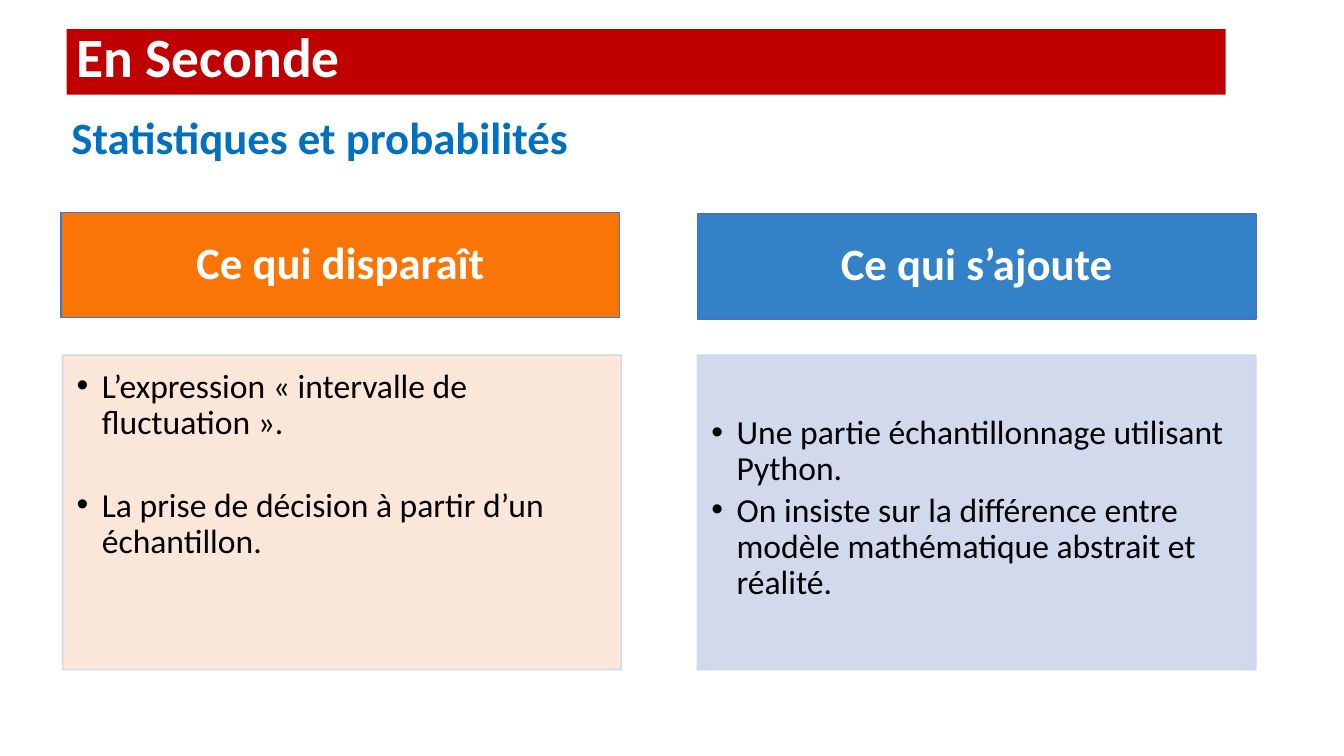
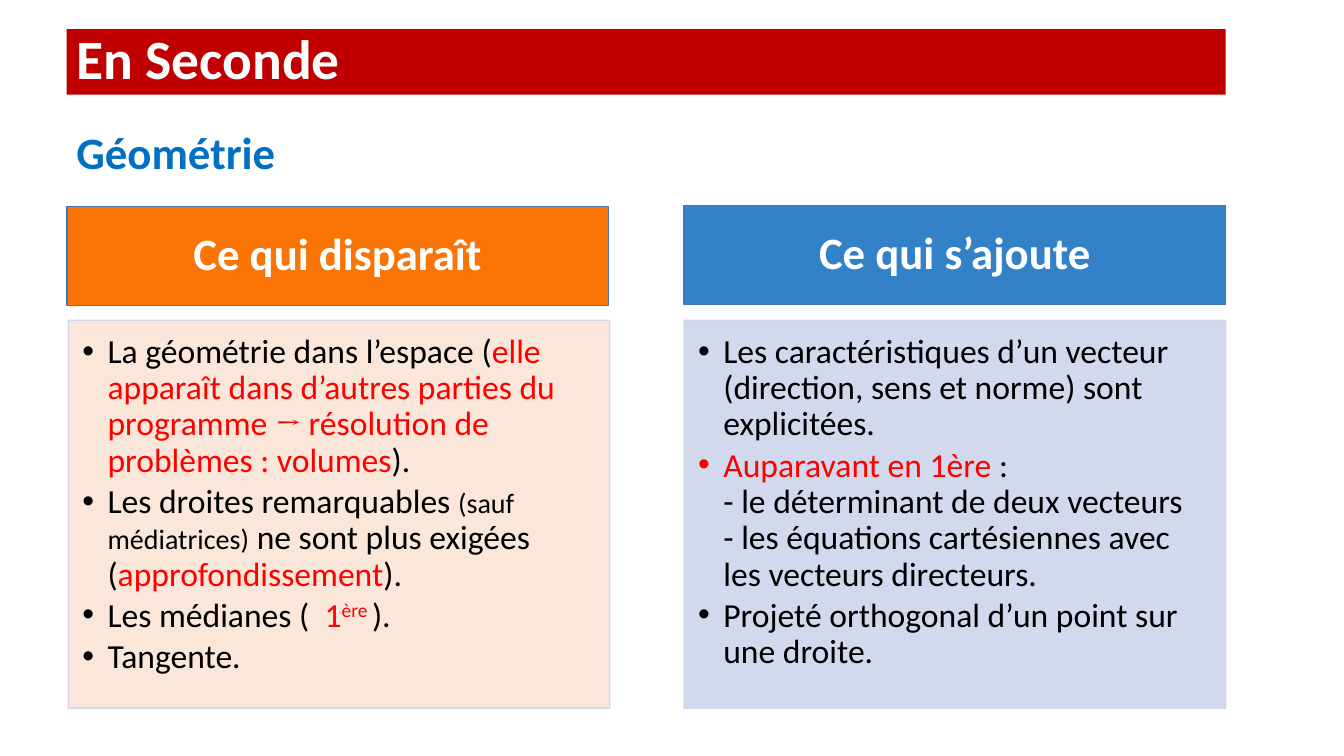
from dataclasses import dataclass
from typing import NamedTuple

from lxml.etree import SubElement
from pptx import Presentation
from pptx.dml.color import RGBColor
from pptx.enum.shapes import MSO_SHAPE
from pptx.enum.text import MSO_ANCHOR, MSO_AUTO_SIZE, PP_ALIGN
from pptx.oxml.ns import qn
from pptx.util import Pt


# Theme: colours, fonts and type sizes
@dataclass(frozen=True)
class Theme:
    red: str = "C00000"
    blue: str = "0070C0"
    white: str = "FFFFFF"
    black: str = "000000"
    alert: str = "FF0000"
    orange: str = "FA7406"
    azure: str = "3381C7"
    edge: str = "4472C4"
    peach: str = "FBE5D6"
    pale: str = "CFD5EA"
    font: str = "Calibri"
    serif: str = "Cambria"
    title: float = 39.6
    head: float = 32
    text: float = 24
    small: float = 20
    alpha: int = 90


THEME = Theme()


class Box(NamedTuple):
    left: float
    top: float
    width: float
    height: float


class Run(NamedTuple):
    text: str
    color: str = THEME.black
    size: float = THEME.text
    font: str = THEME.font
    bold: bool = False
    raised: bool = False


class Item(NamedTuple):
    runs: list[Run]
    before: float = 0


BREAK = Run("\n")


@dataclass(frozen=True)
class Panel:
    head: Box
    body: Box
    label: str
    color: str
    tint: str
    items: list[Item]
    inset: float = 10


@dataclass(frozen=True)
class Page:
    topic: str
    place: Box
    panels: list[Panel]
    spacing: float = 0.9


# Drawing helpers
def rgb(code: str) -> RGBColor:
    return RGBColor.from_string(code)


def add_runs(para, runs: list[Run], spacing: float = 0.9) -> None:
    para.line_spacing = spacing
    for part in runs:
        if part == BREAK:
            para.add_line_break()
            continue
        run = para.add_run()
        run.text = part.text
        font = run.font
        font.name, font.size, font.bold = part.font, Pt(part.size), part.bold
        font.color.rgb = rgb(part.color)
        if part.raised:
            font._element.set("baseline", "30000")


def set_frame(frame, anchor, left=7.2, top=3.6, right=7.2, bottom=3.6) -> None:
    frame.word_wrap = True
    frame.auto_size = MSO_AUTO_SIZE.NONE
    frame.vertical_anchor = anchor
    frame.margin_left, frame.margin_top = Pt(left), Pt(top)
    frame.margin_right, frame.margin_bottom = Pt(right), Pt(bottom)


def add_rect(slide, box: Box, fill: str, line: str):
    rect = slide.shapes.add_shape(MSO_SHAPE.RECTANGLE, *map(Pt, box))
    rect.shadow.inherit = False
    rect.fill.solid()
    rect.fill.fore_color.rgb = rgb(fill)
    rect.line.color.rgb = rgb(line)
    rect.line.width = Pt(1)
    return rect


def add_bullet(para) -> None:
    props = para._p.get_or_add_pPr()
    props.set("marL", str(Pt(18)))
    props.set("indent", str(-Pt(18)))
    SubElement(props, qn("a:buFont")).set("typeface", "Arial")
    SubElement(props, qn("a:buChar")).set("char", "•")


def add_panel(slide, panel: Panel) -> None:
    # Coloured heading
    head = add_rect(slide, panel.head, panel.color, THEME.edge)
    set_frame(head.text_frame, MSO_ANCHOR.MIDDLE, 18, 10, 18, 10)
    para = head.text_frame.paragraphs[0]
    para.alignment = PP_ALIGN.CENTER
    add_runs(para, [Run(panel.label, THEME.white, THEME.head, bold=True)])

    # Tinted list
    body = add_rect(slide, panel.body, panel.tint, THEME.pale)
    for color in body._element.spPr.iter(qn("a:srgbClr")):
        SubElement(color, qn("a:alpha")).set("val", str(THEME.alpha * 1000))
    frame = body.text_frame
    set_frame(frame, MSO_ANCHOR.TOP, 10, panel.inset, 13.7, 15)
    for rank, item in enumerate(panel.items):
        para = frame.add_paragraph() if rank else frame.paragraphs[0]
        para.alignment = PP_ALIGN.LEFT
        para.space_before, para.space_after = Pt(item.before), Pt(3.6)
        add_runs(para, item.runs)
        add_bullet(para)


def add_page(deck, page: Page) -> None:
    slide = deck.slides.add_slide(deck.slide_layouts[5])

    # Title band
    title = slide.shapes.title
    title.left, title.top, title.width, title.height = map(Pt, BAND)
    title.fill.solid()
    title.fill.fore_color.rgb = rgb(THEME.red)
    set_frame(title.text_frame, MSO_ANCHOR.MIDDLE)
    para = title.text_frame.paragraphs[0]
    para.alignment = PP_ALIGN.LEFT
    add_runs(para, [Run("En Seconde", THEME.white, THEME.title, bold=True)],
             page.spacing)

    # Topic line
    topic = slide.shapes.add_textbox(*map(Pt, page.place))
    set_frame(topic.text_frame, MSO_ANCHOR.BOTTOM)
    add_runs(topic.text_frame.paragraphs[0],
             [Run(page.topic, THEME.blue, THEME.head, bold=True)])

    for panel in page.panels:
        add_panel(slide, panel)


# Content
BAND = Box(47.5, 20.9, 828, 46.8)


def lost(head: Box, body: Box, items: list[Item]) -> Panel:
    return Panel(head, body, "Ce qui disparaît", THEME.orange, THEME.peach, items)


def gained(head: Box, body: Box, items: list[Item], inset: float = 10) -> Panel:
    return Panel(head, body, "Ce qui s’ajoute", THEME.azure, THEME.pale, items,
                 inset)


def alert(text: str, font: str = THEME.font, raised: bool = False) -> Run:
    return Run(text, THEME.alert, font=font, raised=raised)


PAGES = [
    Page("Statistiques et probabilités", Box(44, 74.2, 828, 46.8), [
        lost(Box(43.7, 152, 399, 75), Box(44.8, 253.7, 399, 224.6), [
            Item([Run("L’expression « intervalle de fluctuation ».")]),
            Item([Run("La prise de décision à partir d’un échantillon.")], 29.6),
        ]),
        gained(Box(498.2, 152.8, 399, 75), Box(498.2, 253.7, 399, 224.6), [
            Item([Run("Une partie échantillonnage utilisant Python.")]),
            Item([Run("On insiste sur la différence entre modèle "
                      "mathématique abstrait et réalité.")]),
        ], 43),
    ], 0.8),
    Page("Géométrie", Box(47.5, 85, 828, 46.8), [
        lost(Box(47.8, 147.7, 386.8, 70.5), Box(48.8, 228.8, 386.8, 277), [
            Item([
                Run("La géométrie dans l’espace ("),
                alert("elle apparaît dans d’autres parties du programme "),
                alert("→ ", THEME.serif),
                alert("résolution de problèmes : volumes"),
                Run(")."),
            ]),
            Item([
                Run("Les droites remarquables "),
                Run("(sauf médiatrices)", size=THEME.small),
                Run(" ne sont plus exigées ("),
                alert("approfondissement"),
                Run(")."),
            ]),
            Item([
                Run("Les médianes ( "),
                alert(" 1"),
                alert("ère ", raised=True),
                Run(")."),
            ]),
            Item([Run("Tangente.")]),
        ]),
        gained(Box(488.7, 146.9, 386.8, 70.5), Box(488.7, 228.8, 386.8, 277), [
            Item([Run("Les caractéristiques d’un vecteur (direction, sens "
                      "et norme) sont explicitées.")]),
            Item([
                alert("Auparavant en 1ère "),
                Run(":"),
                BREAK,
                Run("- le déterminant de deux vecteurs"),
                BREAK,
                Run("- les équations cartésiennes avec les vecteurs directeurs."),
            ]),
            Item([Run("Projeté orthogonal d’un point sur une droite.")]),
        ]),
    ]),
]


def main() -> None:
    deck = Presentation()
    deck.slide_width, deck.slide_height = Pt(960), Pt(540)
    for page in PAGES:
        add_page(deck, page)
    deck.save("out.pptx")


if __name__ == "__main__":
    main()
